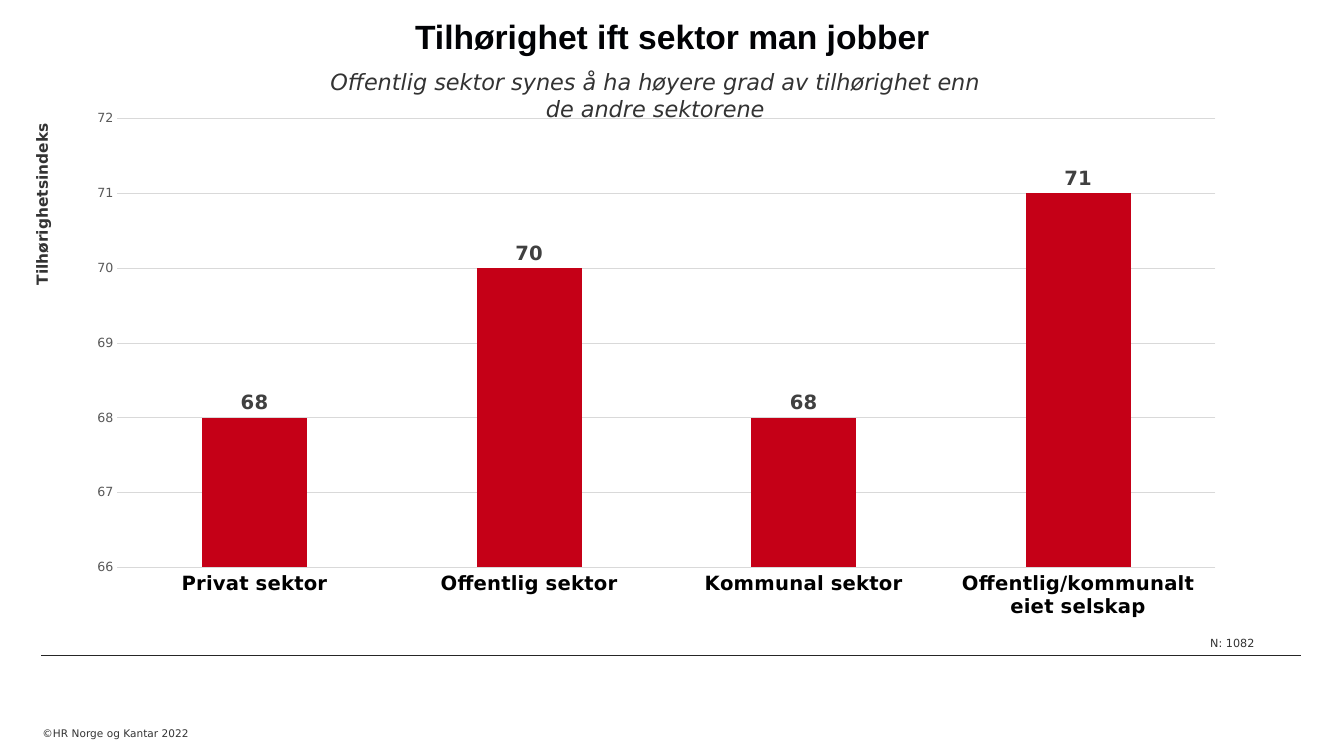
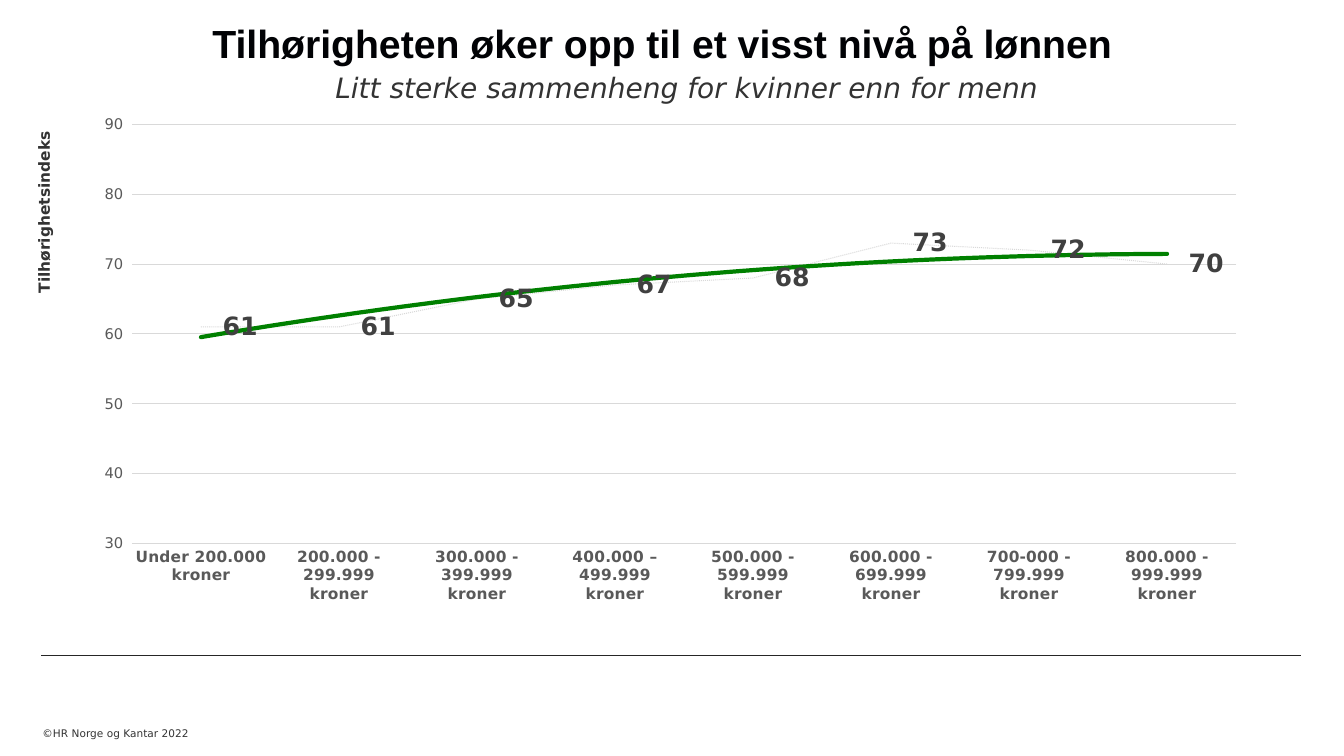
from lxml import etree
from pptx import Presentation
from pptx.chart.data import CategoryChartData
from pptx.dml.color import RGBColor
from pptx.enum.chart import XL_CHART_TYPE, XL_LABEL_POSITION, XL_MARKER_STYLE, XL_TICK_MARK
from pptx.enum.dml import MSO_LINE
from pptx.enum.shapes import MSO_CONNECTOR
from pptx.enum.text import MSO_ANCHOR, PP_ALIGN
from pptx.oxml import parse_xml
from pptx.oxml.ns import nsdecls, qn
from pptx.util import Cm, Pt

BAR, LINE = XL_CHART_TYPE.COLUMN_CLUSTERED, XL_CHART_TYPE.LINE
ABOVE, RIGHT = XL_LABEL_POSITION.OUTSIDE_END, XL_LABEL_POSITION.RIGHT
NO_TICK, NO_MARK = XL_TICK_MARK.NONE, XL_MARKER_STYLE.NONE
DOTS, STRAIGHT = MSO_LINE.ROUND_DOT, MSO_CONNECTOR.STRAIGHT
TOP, BOTTOM = MSO_ANCHOR.TOP, MSO_ANCHOR.BOTTOM
LEFT, CENTER = PP_ALIGN.LEFT, PP_ALIGN.CENTER

HEAD, BODY = "Arial", "DejaVu Sans"
INK, TEXT, RULE = "010205", "333333", "262626"
GRID, GREY, LABEL = "D9D9D9", "595959", "404040"
RED, GREEN = "C50017", "008000"
PAD = (0.25, 0.13, 0.25, 0.13)
WHOLE, SPACED = "###0", r'_-* #\ ##0_-;\-* #\ ##0_-;_-* "-"??_-;_-'


def color(code):
    return RGBColor.from_string(code)


def style(font, size, code, name=BODY, bold=False, italic=False):
    font.size, font.name = Pt(size), name
    font.bold, font.italic = bold, italic
    font.color.rgb = color(code)


def text(slide, box, words, size, code=TEXT, name=BODY, bold=False,
         italic=False, align=CENTER, anchor=TOP, pad=PAD, wrap=True):
    shape = slide.shapes.add_textbox(*map(Cm, box))
    frame = shape.text_frame
    frame.word_wrap, frame.vertical_anchor = wrap, anchor
    (frame.margin_left, frame.margin_top,
     frame.margin_right, frame.margin_bottom) = map(Cm, pad)
    para = frame.paragraphs[0]
    para.text, para.alignment = words, align
    style(para.font, size, code, name, bold, italic)
    return shape


def title(slide, box, words, size):
    text(slide, box, words, size, INK, HEAD, bold=True)


def side(slide, box):
    """Upright name of the value axis."""
    text(slide, box, "Tilhørighetsindeks", 11, bold=True, wrap=False).rotation = 270


def footer(slide):
    text(slide, (1.07, 17.83, 6, 1.22), "©HR Norge og Kantar 2022", 7.5,
         align=LEFT, anchor=BOTTOM, pad=(0, 0, 0, 0.48))
    rule = slide.shapes.add_connector(STRAIGHT, Cm(1.04), Cm(16.51), Cm(32.79), Cm(16.51))
    rule.line.color.rgb, rule.line.width = color(RULE), Pt(0.75)
    etree.SubElement(rule._element.spPr, qn("a:effectLst"))


def page(deck):
    slide = deck.slides.add_slide(deck.slide_layouts[6])
    footer(slide)
    return slide


def place(chart, area):
    """Fix the inner plot area as shares of the chart."""
    plot = chart._chartSpace.chart.plotArea
    for old in plot.findall(qn("c:layout")):
        plot.remove(old)
    modes = '<c:xMode val="edge"/><c:yMode val="edge"/>'
    sizes = "".join(f'<c:{key} val="{val}"/>' for key, val in zip("xywh", area))
    plot.insert(0, parse_xml(
        f'<c:layout {nsdecls("c")}><c:manualLayout><c:layoutTarget val="inner"/>'
        f'{modes}{sizes}</c:manualLayout></c:layout>'))


def graph(slide, kind, box, area, cats, vals, scale, form, sizes, ink, spot):
    """Draw one series; sizes are for categories, values and labels."""
    data = CategoryChartData()
    data.categories = cats
    data.add_series("Tilhørighetsindeks", vals)
    chart = slide.shapes.add_chart(kind, *map(Cm, box), data).chart
    chart.has_legend = chart.has_title = False
    style(chart.font, 10, "000000")
    place(chart, area)
    # Axes
    base, axis = chart.category_axis, chart.value_axis
    for item, size, code, bold in ((base, sizes[0], ink, True), (axis, sizes[1], GREY, False)):
        item.major_tick_mark = item.minor_tick_mark = NO_TICK
        style(item.tick_labels.font, size, code, bold=bold)
    axis.minimum_scale, axis.maximum_scale, axis.major_unit = scale
    axis.format.line.fill.background()
    for line in (base.format.line, axis.major_gridlines.format.line):
        line.color.rgb, line.width = color(GRID), Pt(0.75)
    # Labels
    plot = chart.plots[0]
    plot.vary_by_categories = False
    row = plot.series[0]
    marks = row.data_labels
    marks.show_value, marks.position = True, spot
    style(marks.font, sizes[2], LABEL, bold=True)
    for part in (axis.tick_labels, marks):
        part.number_format, part.number_format_is_linked = form, False
    return plot, row


def trend(row, code, width):
    curve = parse_xml(
        f'<c:trendline {nsdecls("c", "a")}><c:spPr><a:ln w="{Pt(width)}" cap="rnd">'
        f'<a:solidFill><a:srgbClr val="{code}"/></a:solidFill></a:ln></c:spPr>'
        '<c:trendlineType val="poly"/><c:order val="2"/>'
        '<c:dispRSqr val="0"/><c:dispEq val="0"/></c:trendline>')
    row._element.find(qn("c:cat")).addprevious(curve)


def sector(deck):
    slide = page(deck)
    title(slide, (1.07, 0.28, 31.75, 1.2), "Tilhørighet ift sektor man jobber", 24)
    cats = ("Privat sektor", "Offentlig sektor", "Kommunal sektor",
            "Offentlig/kommunalt eiet selskap")
    plot, row = graph(slide, BAR, (1.78, 2.59, 29.44, 13.31), (0.04, 0.03, 0.94, 0.85),
                      cats, (68, 70, 68, 71), (66, 72, 1), WHOLE, (14, 9, 14),
                      "000000", ABOVE)
    plot.gap_width, plot.overlap = 162, -27
    row.format.fill.solid()
    row.format.fill.fore_color.rgb = color(RED)
    side(slide, (-1.24, 4.78, 4.6, 0.74))
    text(slide, (30.25, 15.9, 1.68, 0.6), "N: 1082", 8, align=LEFT, wrap=False)
    text(slide, (7.98, 1.6, 17.07, 1.63),
         "Offentlig sektor synes å ha høyere grad av tilhørighet enn de andre sektorene",
         16, italic=True)


def salary(deck):
    slide = page(deck)
    cats = ("Under 200.000 kroner", "200.000 - 299.999 kroner", "300.000 - 399.999 kroner",
            "400.000 – 499.999 kroner", "500.000 - 599.999 kroner",
            "600.000 - 699.999 kroner", "700-000 - 799.999 kroner",
            "800.000 - 999.999 kroner")
    _, row = graph(slide, LINE, (1.83, 2.62, 29.92, 12.88), (0.05, 0.04, 0.93, 0.82),
                   cats, (61, 61, 65, 67, 68, 73, 72, 70), (30, 90, 10), SPACED,
                   (11, 10.5, 18), GREY, RIGHT)
    row.smooth, row.marker.style = False, NO_MARK
    line = row.format.line
    line.color.rgb, line.width, line.dash_style = color(GRID), Pt(0.75), DOTS
    trend(row, GREEN, 3)
    title(slide, (2.87, 0.36, 27.64, 1.45),
          "Tilhørigheten øker opp til et visst nivå på lønnen", 28)
    side(slide, (-1.19, 4.98, 4.6, 0.74))
    text(slide, (8.1, 1.65, 18.42, 1.12), "Litt sterke sammenheng for kvinner enn for menn",
         20, italic=True, wrap=False)


def main():
    deck = Presentation()
    deck.slide_width, deck.slide_height = Cm(33.87), Cm(19.05)
    sector(deck)
    salary(deck)
    deck.save("out.pptx")


if __name__ == "__main__":
    main()
